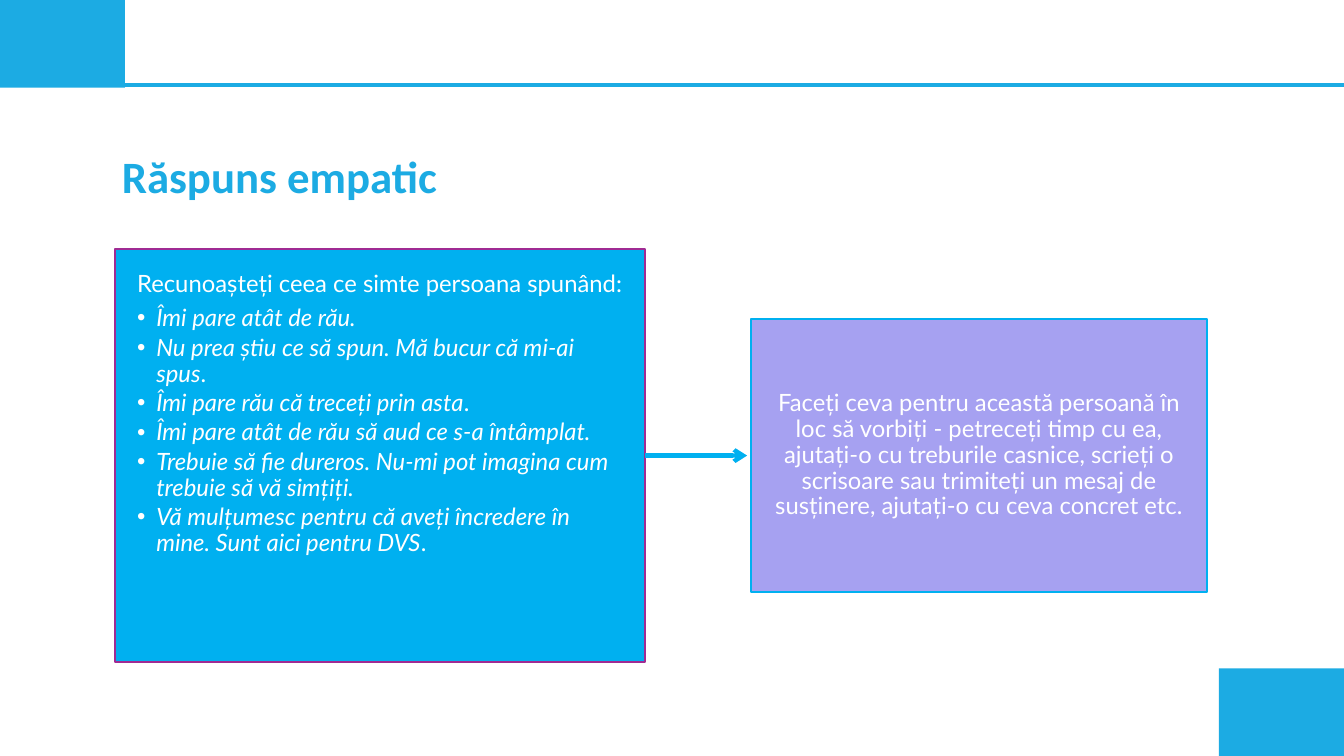
from dataclasses import dataclass
from lxml.etree import SubElement
from pptx import Presentation
from pptx.dml.color import RGBColor
from pptx.enum.shapes import MSO_CONNECTOR, MSO_SHAPE
from pptx.enum.text import MSO_ANCHOR, PP_ALIGN
from pptx.oxml.ns import qn
from pptx.util import Inches, Pt


@dataclass(frozen=True)
class Theme:
    brand: str = "1CABE3"
    sky: str = "00B0F0"
    plum: str = "A02B93"
    lilac: str = "A6A1F1"
    white: str = "FFFFFF"
    head: int = 32
    body: int = 17
    edge: float = 1.5
    rule: int = 3


THEME = Theme()
WIDE, HIGH = 13.33, 7.5
BLOCK = (1.24, 0.87)

INTRO = "Recunoașteți ceea ce simte persoana spunând:"
QUOTES = [
    ("Îmi pare atât de rău.", ""),
    ("Nu prea știu ce să spun. Mă bucur că mi-ai spus", "."),
    ("Îmi pare rău că treceți prin asta", "."),
    ("Îmi pare atât de rău să aud ce s-a întâmplat.", ""),
    ("Trebuie să fie dureros. Nu-mi pot imagina cum trebuie să vă simțiți.", ""),
    ("Vă mulțumesc pentru că aveți încredere în mine. Sunt aici pentru DVS", "."),
]
ADVICE = (
    "Faceți ceva pentru această persoană în loc să vorbiți - petreceți timp cu ea, "
    "ajutați-o cu treburile casnice, scrieți o scrisoare sau trimiteți un mesaj de "
    "susținere, ajutați-o cu ceva concret etc."
)


def assign(item, values):
    for name, value in values.items():
        setattr(item, name, value)


def set_frame(frame, side, top, anchor):
    assign(frame, {
        "word_wrap": True,
        "vertical_anchor": anchor,
        "margin_left": Inches(side),
        "margin_right": Inches(side),
        "margin_top": Inches(top),
        "margin_bottom": Inches(top),
    })


def add_run(para, text, color, **style):
    run = para.add_run()
    run.text = text
    assign(run.font, style)
    run.font.color.rgb = RGBColor.from_string(color)


def add_body(para, text, italic=False):
    add_run(para, text, THEME.white, name="Lato", size=Pt(THEME.body), italic=italic)


def add_bullet(para):
    props = para._p.get_or_add_pPr()
    indent = Inches(0.19)
    props.set("marL", str(indent))
    props.set("indent", str(-indent))
    SubElement(props, qn("a:buFont")).set("typeface", "Arial")
    SubElement(props, qn("a:buChar")).set("char", "•")


def add_box(slide, box, fill, line=None):
    shape = slide.shapes.add_shape(MSO_SHAPE.RECTANGLE, *map(Inches, box))
    shape.shadow.inherit = False
    shape.fill.solid()
    shape.fill.fore_color.rgb = RGBColor.from_string(fill)
    if line:
        shape.line.color.rgb = RGBColor.from_string(line)
        shape.line.width = Pt(THEME.edge)
    else:
        shape.line.fill.background()
    return shape


def add_line(slide, start, end, color):
    line = slide.shapes.add_connector(
        MSO_CONNECTOR.STRAIGHT, *map(Inches, (*start, *end)))
    line.line.color.rgb = RGBColor.from_string(color)
    line.line.width = Pt(THEME.rule)
    SubElement(line._element.spPr, qn("a:effectLst"))
    return line


def add_frame(slide, box):
    left, top, width, height = box
    wide, high = BLOCK
    add_box(slide, (left, top, wide, high), THEME.brand)
    level = top + 0.84
    add_line(slide, (left + 1.13, level), (left + width, level), THEME.brand)
    add_box(slide, (left + width - wide, top + height - high, wide, high), THEME.brand)


def add_title(slide, box, text):
    frame = slide.shapes.add_textbox(*map(Inches, box)).text_frame
    set_frame(frame, 0.1, 0.05, MSO_ANCHOR.MIDDLE)
    para = frame.paragraphs[0]
    para.line_spacing = 0.9
    add_run(para, text, THEME.brand, name="Calibri", size=Pt(THEME.head), bold=True)


def add_quotes(slide, box):
    card = add_box(slide, box, THEME.sky, THEME.plum)
    frame = card.text_frame
    set_frame(frame, 0.22, 0.23, MSO_ANCHOR.TOP)
    para = frame.paragraphs[0]
    assign(para, {"alignment": PP_ALIGN.LEFT, "line_spacing": 0.9, "space_after": Pt(6)})
    add_body(para, INTRO)
    for quote, stop in QUOTES:
        para = frame.add_paragraph()
        assign(para, {
            "alignment": PP_ALIGN.LEFT, "level": 1,
            "line_spacing": 0.9, "space_after": Pt(2.7),
        })
        add_bullet(para)
        add_body(para, quote, True)
        if stop:
            add_body(para, stop)
    return card


def add_advice(slide, box):
    frame = add_box(slide, box, THEME.lilac, THEME.sky).text_frame
    set_frame(frame, 0.22, 0.23, MSO_ANCHOR.MIDDLE)
    para = frame.paragraphs[0]
    assign(para, {"alignment": PP_ALIGN.CENTER, "line_spacing": 0.9, "space_after": Pt(6)})
    add_body(para, ADVICE)


def add_arrow(slide, card, box, reach):
    left, top, width, height = box
    edge, level = left + width, top + height / 2
    arrow = add_line(slide, (edge, level), (edge + reach, level), THEME.sky)
    arrow.begin_connect(card, 3)
    SubElement(arrow.line._get_or_add_ln(), qn("a:tailEnd")).set("type", "arrow")


def add_flow(slide, box):
    left, top, width, height = box
    first = (left, top, 5.26, height)
    wide, high = 4.52, 2.71
    second = (left + width - wide, top + (height - high) / 2, wide, high)
    card = add_quotes(slide, first)
    add_advice(slide, second)
    add_arrow(slide, card, first, 1.01)


def main():
    deck = Presentation()
    assign(deck, {"slide_width": Inches(WIDE), "slide_height": Inches(HIGH)})
    slide = deck.slides.add_slide(deck.slide_layouts[6])
    add_frame(slide, (0, 0, WIDE, HIGH))
    add_title(slide, (1.11, 1.32, 10.99, 0.91), "Răspuns empatic")
    add_flow(slide, (1.14, 2.47, 10.83, 4.1))
    deck.save("out.pptx")


if __name__ == "__main__":
    main()
